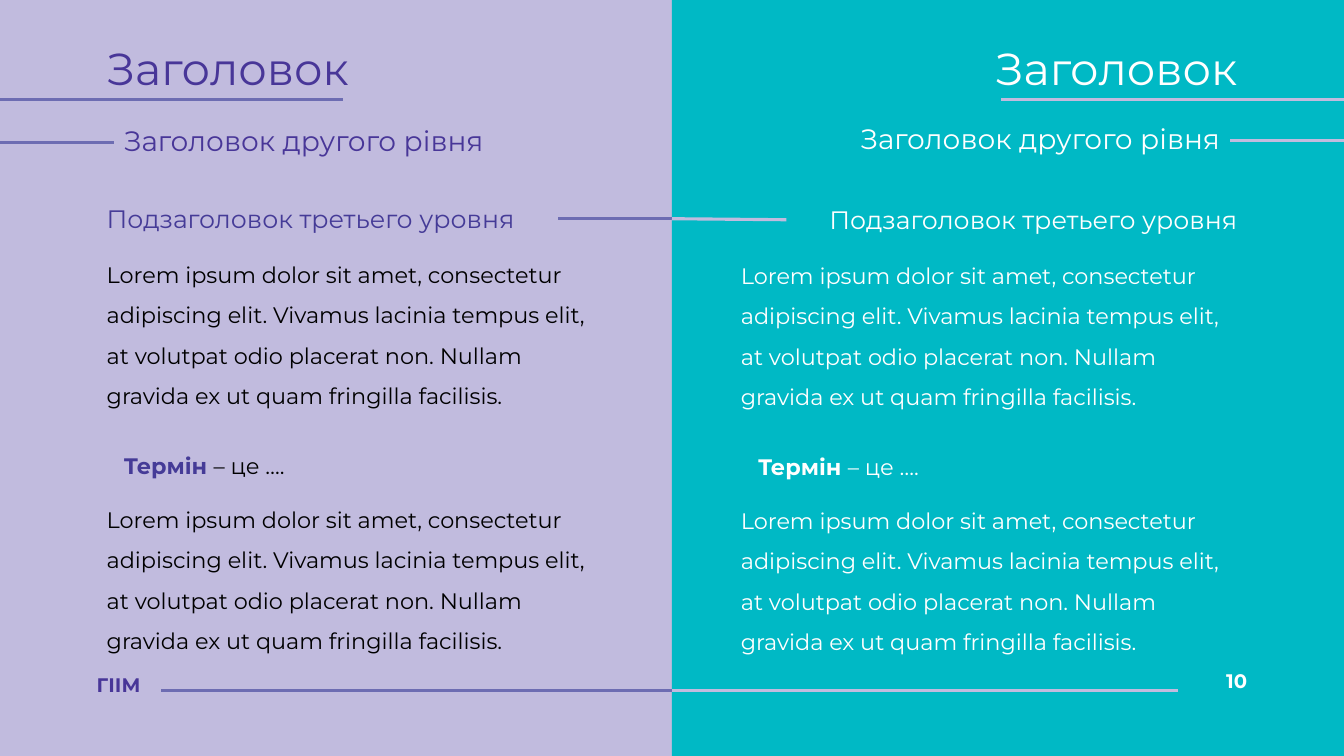
from dataclasses import dataclass

import pptx
import pptx.dml.color
import pptx.enum.shapes
import pptx.enum.text
import pptx.oxml
import pptx.oxml.ns
import pptx.util
from pptx.enum.text import MSO_ANCHOR, PP_ALIGN

RGBColor = pptx.dml.color.RGBColor
LILAC = RGBColor(0xC1, 0xBB, 0xDE)
TURQUOISE = RGBColor(0x00, 0xB9, 0xC5)
VIOLET = RGBColor(0x6D, 0x6C, 0xB2)
INDIGO = RGBColor(0x48, 0x36, 0x98)
DEEP_INDIGO = RGBColor(0x45, 0x3B, 0x97)
WHITE = RGBColor(0xFF, 0xFF, 0xFF)
BLACK = RGBColor(0x00, 0x00, 0x00)

FONT = "Montserrat"
WIDTH, HEIGHT = 13.33, 7.5
HALF = WIDTH / 2
MARGIN = 0.96
INDENT = 0.17
COLUMN = 5.12
LOREM = ("Lorem ipsum dolor sit amet, consectetur adipiscing elit. "
         "Vivamus lacinia tempus elit, at volutpat odio placerat non. "
         "Nullam gravida ex ut quam fringilla facilisis.")


@dataclass
class Half:
    """One side of the slide; the right one mirrors the left one."""
    left: float
    mirrored: bool
    heading: RGBColor
    accent: RGBColor
    body: RGBColor
    rule: RGBColor
    level2_top: float
    level3_top: float
    body_top: float
    footer: str
    footer_top: float
    footer_start: float

    def x(self, offset, width=0.0):
        """Left edge of an item that lies offset inches in from the outer edge."""
        if self.mirrored:
            return self.left + HALF - offset - width
        return self.left + offset


def inches(*lengths):
    return [pptx.util.Inches(length) for length in lengths]


def add_text(slide, place, spans, size, align=PP_ALIGN.LEFT, spacing=None):
    """Text box of one paragraph; spans are (text, colour, bold)."""
    box = slide.shapes.add_textbox(*inches(*place))
    box.text_frame.word_wrap = True
    para = box.text_frame.paragraphs[0]
    para.alignment = align
    if spacing:
        para.line_spacing = spacing
    for text, colour, bold in spans:
        span = para.add_run()
        span.text = text
        span.font.name = FONT
        span.font.size = pptx.util.Pt(size)
        span.font.bold = bold
        span.font.color.rgb = colour
    return box


def add_rule(slide, start, end, colour, weight=2.25):
    line = slide.shapes.add_connector(
        pptx.enum.shapes.MSO_CONNECTOR.STRAIGHT, *inches(*start, *end))
    line.line.color.rgb = colour
    line.line.width = pptx.util.Pt(weight)
    properties = line._element.spPr
    properties.append(pptx.oxml.parse_xml(
        "<a:effectLst %s/>" % pptx.oxml.ns.nsdecls("a")))
    return line


def add_headings(slide, half):
    align = PP_ALIGN.RIGHT if half.mirrored else PP_ALIGN.LEFT
    outer_side, inner_side = (3, 1) if half.mirrored else (1, 3)

    title_width = HALF - MARGIN
    add_text(slide, (half.x(MARGIN, title_width), 0.41, title_width, 0.59),
             [("Заголовок", half.heading, False)], 32, align, 0.9)
    add_rule(slide, (half.x(0), 0.99), (half.x(3.4), 0.99), half.rule)

    level2_width = 4.94
    level2 = add_text(
        slide, (half.x(MARGIN + INDENT, level2_width), half.level2_top, level2_width, 0.4),
        [("Заголовок другого рівня", half.heading, False)], 20, align, 0.9)
    middle = half.level2_top + 0.2
    rule = add_rule(slide, (half.x(0), middle), (half.x(MARGIN + INDENT), middle), half.rule)
    rule.end_connect(level2, outer_side)

    level3_width = 4.57
    level3 = add_text(
        slide, (half.x(MARGIN, level3_width), half.level3_top, level3_width, 0.4),
        [("Подзаголовок третьего уровня", half.accent, False)], 18, align)
    rule = add_rule(slide, (half.x(HALF), 2.17),
                    (half.x(MARGIN + level3_width), half.level3_top + 0.2), half.rule)
    rule.end_connect(level3, inner_side)


def add_body(slide, half):
    left = half.x(MARGIN, COLUMN)
    for top in (half.body_top, half.body_top + 2.43):
        add_text(slide, (left, top, COLUMN, 1.67),
                 [(LOREM, half.body, False)], 16, spacing=1.5)
    add_text(slide, (left + INDENT, half.body_top + 2.03, 4.94, 0.37),
             [("Термін ", half.accent, True), ("– це ….", half.body, False)], 16)


def add_footer(slide, half):
    align = PP_ALIGN.RIGHT if half.mirrored else PP_ALIGN.LEFT
    add_rule(slide, (half.x(half.footer_start), 6.85), (half.x(HALF), 6.85), half.rule, 1.5)
    box = add_text(slide, (half.x(MARGIN, 3), half.footer_top, 3, 0.24),
                   [(half.footer, half.heading, True)], 14, align)
    frame = box.text_frame
    frame.vertical_anchor = MSO_ANCHOR.BOTTOM
    frame.margin_left = frame.margin_right = frame.margin_top = frame.margin_bottom = 0


def add_panel(slide, left, colour):
    panel = slide.shapes.add_shape(
        pptx.enum.shapes.MSO_SHAPE.RECTANGLE, *inches(left, 0, HALF, HEIGHT))
    panel.shadow.inherit = False
    panel.fill.solid()
    panel.fill.fore_color.rgb = colour
    panel.line.fill.background()


def main():
    deck = pptx.Presentation()
    deck.slide_width, deck.slide_height = inches(WIDTH, HEIGHT)
    slide = deck.slides.add_slide(deck.slide_layouts[6])
    slide.background.fill.solid()
    slide.background.fill.fore_color.rgb = LILAC
    add_panel(slide, HALF, TURQUOISE)

    light = Half(left=0, mirrored=False, heading=INDIGO, accent=DEEP_INDIGO,
                 body=BLACK, rule=VIOLET, level2_top=1.21, level3_top=1.97,
                 body_top=2.41, footer="ГІІМ", footer_top=6.67, footer_start=1.6)
    vivid = Half(left=HALF, mirrored=True, heading=WHITE, accent=WHITE,
                 body=WHITE, rule=LILAC, level2_top=1.19, level3_top=1.98,
                 body_top=2.42, footer="10", footer_top=6.63, footer_start=1.65)
    for half in (light, vivid):
        add_headings(slide, half)
        add_body(slide, half)
        add_footer(slide, half)
    deck.save("out.pptx")


if __name__ == "__main__":
    main()
